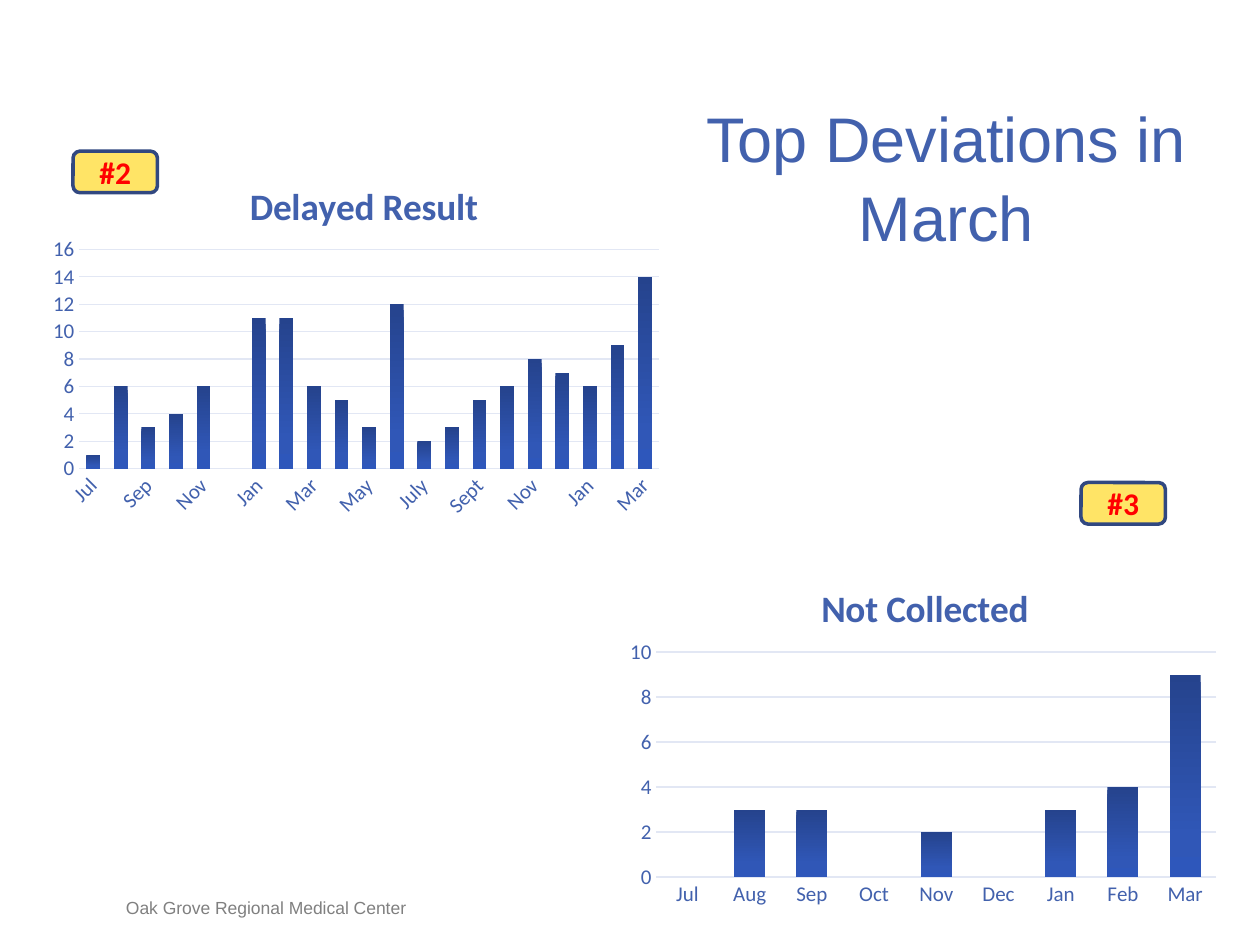
from lxml import etree
from pptx import Presentation
from pptx.chart.data import CategoryChartData as Data
from pptx.dml.color import RGBColor as RGB
from pptx.enum.chart import XL_CHART_TYPE as Kind, XL_TICK_MARK as Tick
from pptx.enum.shapes import MSO_SHAPE as Shape
from pptx.enum.text import MSO_ANCHOR as Anchor, PP_ALIGN as Align
from pptx.oxml import parse_xml
from pptx.oxml.ns import nsdecls, qn
from pptx.util import Inches, Pt

HUES = {"blue": "4261AD", "grid": "E2E7F4", "gold": "FFE466",
        "navy": "314880", "red": "FF0000", "gray": "808080", "black": "000000"}
STOPS = [(0, "25438D"), (80, "3057B7"), (100, "2E57BB")]


class Deck:
    def __init__(self):
        self.prs = Presentation()
        self.prs.slide_width, self.prs.slide_height = Inches(10), Inches(7.5)
        self.slide = self.prs.slides.add_slide(self.prs.slide_layouts[5])

    def hue(self, name):
        return RGB.from_string(HUES[name])

    def style(self, font, size, hue, face="Calibri", bold=False):
        font.name, font.size, font.bold = face, Pt(size), bold
        font.color.rgb = self.hue(hue)

    def label(self, shape, text, anchor, align):
        frame = shape.text_frame
        frame.word_wrap = True
        frame.vertical_anchor = anchor
        frame.margin_left = frame.margin_right = 0
        frame.margin_top = frame.margin_bottom = 0
        para = frame.paragraphs[0]
        para.text, para.alignment = text, align
        return para

    def title(self, text, box):
        shape = self.slide.shapes.title
        shape.left, shape.top, shape.width, shape.height = map(Inches, box)
        para = self.label(shape, text, Anchor.TOP, Align.CENTER)
        para.line_spacing = 1.05
        self.style(para.font, 36, "blue", "Arial")

    def footer(self, text, box):
        shape = self.slide.shapes.add_textbox(*map(Inches, box))
        para = self.label(shape, text, Anchor.BOTTOM, Align.LEFT)
        self.style(para.font, 10, "gray", "Arial")

    def badge(self, text, left, top):
        shape = self.slide.shapes.add_shape(
            Shape.ROUNDED_RECTANGLE, *map(Inches, (left, top, 0.67, 0.33)))
        shape.shadow.inherit = False
        shape.fill.solid()
        shape.fill.fore_color.rgb = self.hue("gold")
        shape.line.color.rgb = self.hue("navy")
        shape.line.width = Pt(2)
        para = self.label(shape, text, Anchor.MIDDLE, Align.CENTER)
        self.style(para.font, 18, "red", bold=True)

    def layout(self, node, **spots):
        old = node.find(qn("c:layout"))
        if old is not None:
            node.remove(old)
        lay = parse_xml(f'<c:layout {nsdecls("c")}><c:manualLayout/></c:layout>')
        for tag, val in spots.items():
            etree.SubElement(lay[0], qn("c:" + tag)).set("val", str(val))
        return lay

    def axis(self, axis):
        self.style(axis.tick_labels.font, 12, "blue")
        axis.major_tick_mark = axis.minor_tick_mark = Tick.NONE

    def rule(self, line):
        line.color.rgb = self.hue("grid")
        line.width = Pt(0.75)

    def chart(self, name, cats, vals, box, plot, top, tilt=0):
        data = Data()
        data.categories = cats
        data.add_series(name, vals)
        chart = self.slide.shapes.add_chart(
            Kind.COLUMN_CLUSTERED, *map(Inches, box), data).chart
        self.style(chart.font, 10, "black")
        chart.has_legend = False
        chart.has_title = True
        head = chart.chart_title
        head.include_in_layout = False
        para = head.text_frame.paragraphs[0]
        para.text = name
        self.style(para.font, 21.3, "blue", bold=True)

        cat, val = chart.category_axis, chart.value_axis
        self.axis(cat)
        self.axis(val)
        self.rule(cat.format.line)
        self.rule(val.major_gridlines.format.line)
        val.format.line.fill.background()
        val.minimum_scale, val.maximum_scale, val.major_unit = 0, top, 2
        if tilt:
            body = cat._element.find(qn("c:txPr")).find(qn("a:bodyPr"))
            body.set("rot", str(tilt * 60000))

        bars = chart.plots[0]
        bars.gap_width, bars.overlap, bars.vary_by_categories = 100, -24, False
        fill = bars.series[0].format.fill
        fill.gradient()
        fill.gradient_angle = 270
        stops = fill._fill._gradFill.find(qn("a:gsLst"))
        stops[:] = [parse_xml(
            f'<a:gs {nsdecls("a")} pos="{pos * 1000}"><a:srgbClr val="{hue}"/></a:gs>')
            for pos, hue in STOPS]

        left, high, wide, tall = box
        area = chart._chartSpace.chart.plotArea
        area.insert(0, self.layout(
            area, layoutTarget="inner", xMode="edge", yMode="edge",
            x=round((plot[0] - left) / wide, 2), y=round((plot[1] - high) / tall, 2),
            w=round(plot[2] / wide, 2), h=round(plot[3] / tall, 2)))
        node = head._element
        spot = self.layout(node, xMode="edge", yMode="edge", x=0.32, y=0.07)
        node.find(qn("c:tx")).addnext(spot)
        chart._chartSpace.find(qn("c:txPr")).addprevious(parse_xml(
            f'<c:spPr {nsdecls("c", "a")}><a:noFill/><a:ln><a:noFill/></a:ln></c:spPr>'))


def main():
    deck = Deck()
    deck.footer("Oak Grove Regional Medical Center", (1, 7.12, 3.17, 0.17))
    deck.title("Top Deviations in March", (5.51, 0.76, 4, 1.21))
    deck.badge("#2", 0.58, 1.2)
    deck.badge("#3", 8.58, 3.83)
    year = "Jul Aug Sep Oct Nov Dec Jan Feb Mar".split()
    rest = "Apr May Jun July Aug Sept Oct Nov Dec Jan Feb Mar".split()
    deck.chart("Not Collected", year, [None, 3, 3, None, 2, None, 3, 4, 9],
               (4.92, 4.37, 4.83, 2.88), (5.22, 5.17, 4.43, 1.78), 10)
    deck.chart("Delayed Result", year + rest,
               [1, 6, 3, 4, 6, None, 11, 11, 6, 5, 3, 12, 2, 3, 5, 6, 8, 7, 6, 9, 14],
               (0.33, 1.17, 5, 3), (0.64, 1.98, 4.59, 1.73), 16, -45)
    deck.prs.save("out.pptx")


if __name__ == "__main__":
    main()
